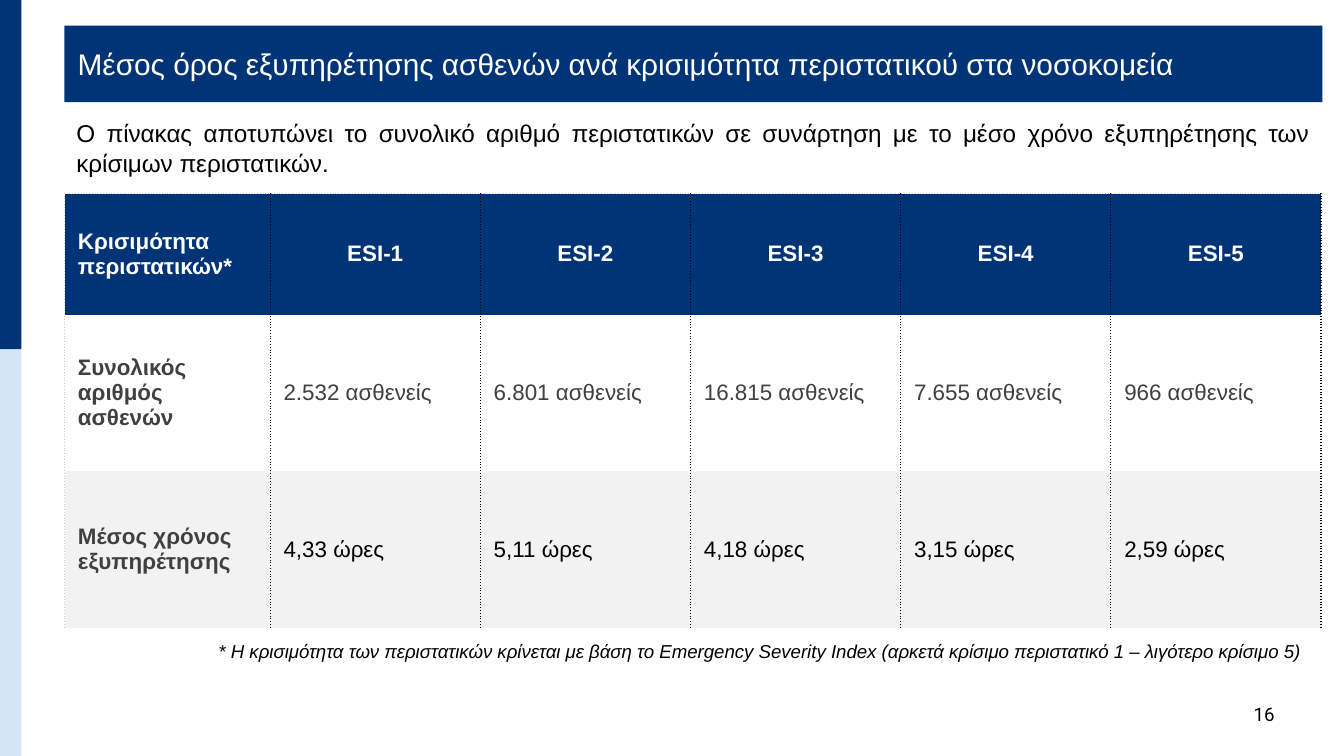
from dataclasses import dataclass

from lxml import etree
from pptx import Presentation
from pptx.dml.color import RGBColor
from pptx.enum.shapes import MSO_SHAPE
from pptx.enum.text import MSO_ANCHOR, PP_ALIGN
from pptx.oxml.ns import qn
from pptx.util import Inches, Pt

RECT = MSO_SHAPE.RECTANGLE
MIDDLE = MSO_ANCHOR.MIDDLE
LEFT, CENTER, RIGHT, JUSTIFY = (
    PP_ALIGN.LEFT, PP_ALIGN.CENTER, PP_ALIGN.RIGHT, PP_ALIGN.JUSTIFY)
NAVY, PALE, GREY, DARK = "013476", "D3E5F6", "F2F2F2", "404040"
BLACK, WHITE, SILVER = "000000", "FFFFFF", "CBCBCB"
WIDTH = 10
HEIGHT = WIDTH * 9 / 16


@dataclass
class Box:
    left: float
    top: float
    width: float
    height: float

    def place(self):
        return [Inches(v) for v in (self.left, self.top, self.width, self.height)]


@dataclass
class Style:
    size: float
    color: str = BLACK
    align: PP_ALIGN = LEFT
    font: str = "Arial"
    bold: bool = False
    italic: bool = False
    after: float = 0


@dataclass
class Row:
    height: float
    cells: list[str]
    head: Style
    body: Style
    fill: str | None = None


def rgb(color: str) -> RGBColor:
    return RGBColor.from_string(color)


def write(frame, text: str, style: Style) -> None:
    frame.text = text
    para = frame.paragraphs[0]
    para.alignment = style.align
    para.space_after = Pt(style.after)
    font = para.font
    font.name, font.size = style.font, Pt(style.size)
    font.bold, font.italic = style.bold, style.italic
    font.color.rgb = rgb(style.color)


def add_bar(slide, box: Box, color: str):
    bar = slide.shapes.add_shape(RECT, *box.place())
    bar.shadow.inherit = False
    bar.fill.solid()
    bar.fill.fore_color.rgb = rgb(color)
    bar.line.fill.background()
    return bar


def set_frame(frame, inset: float) -> None:
    frame.word_wrap = True
    frame.vertical_anchor = MIDDLE
    frame.margin_left = frame.margin_right = Inches(0.1)
    frame.margin_top = frame.margin_bottom = Inches(inset)


def add_text(slide, box: Box, text: str, style: Style, inset: float = 0.1) -> None:
    frame = slide.shapes.add_textbox(*box.place()).text_frame
    set_frame(frame, inset)
    write(frame, text, style)


def add_edge(cell, side: str, color: str | None = None, width: float = 0.75) -> None:
    """Give one side of a cell a dotted line, or none without a colour."""
    line = etree.SubElement(cell._tc.get_or_add_tcPr(), qn(f"a:ln{side}"))
    if color is None:
        etree.SubElement(line, qn("a:noFill"))
        return
    line.set("w", str(Pt(width)))
    fill = etree.SubElement(line, qn("a:solidFill"))
    etree.SubElement(fill, qn("a:srgbClr")).set("val", color)
    etree.SubElement(line, qn("a:prstDash")).set("val", "dot")


def fill_cell(cell, text: str, style: Style, fill: str | None,
              first: bool, top: bool) -> None:
    cell.vertical_anchor = MIDDLE
    cell.margin_left = cell.margin_right = Inches(0.1)
    write(cell.text_frame, text, style)
    add_edge(cell, "L", *((SILVER, 1) if first else (BLACK,)))
    add_edge(cell, "R", BLACK)
    add_edge(cell, "T", *((SILVER, 1) if top else ()))
    add_edge(cell, "B")
    if fill:
        cell.fill.solid()
        cell.fill.fore_color.rgb = rgb(fill)
    else:
        cell.fill.background()


def add_grid(slide, box: Box, rows: list[Row], first: float) -> None:
    """Draw a table whose columns after the first share the rest equally."""
    count = len(rows[0].cells)
    table = slide.shapes.add_table(len(rows), count, *box.place()).table
    table.first_row = table.horz_banding = False
    for c, col in enumerate(table.columns):
        col.width = Inches((box.width - first) / (count - 1) if c else first)
    for r, row in enumerate(rows):
        table.rows[r].height = Inches(row.height)
        for c, text in enumerate(row.cells):
            style = row.body if c else row.head
            fill_cell(table.cell(r, c), text, style, row.fill, c == 0, r == 0)


def main() -> None:
    deck = Presentation()
    deck.slide_width, deck.slide_height = Inches(WIDTH), Inches(HEIGHT)
    slide = deck.slides.add_slide(deck.slide_layouts[6])

    add_bar(slide, Box(0, 0, 0.16, 2.6), NAVY)
    add_bar(slide, Box(0, 2.6, 0.16, HEIGHT - 2.6), PALE)
    add_text(slide, Box(9.23, 5.17, 0.57, 0.28), "16", Style(10, font="Roboto"))

    title = add_bar(slide, Box(0.48, 0.19, 9.36, 0.57), NAVY).text_frame
    set_frame(title, 0.1)
    write(title, "Μέσος όρος εξυπηρέτησης ασθενών ανά κρισιμότητα "
          "περιστατικού στα νοσοκομεία", Style(16, WHITE))

    grid = Box(0.48, 1.44, 9.35, 3.23)
    top = 0.9
    tall = (grid.height - top) / 2
    label = Style(12, DARK, bold=True)
    counts = ["2.532", "6.801", "16.815", "7.655", "966"]
    hours = ["4,33", "5,11", "4,18", "3,15", "2,59"]
    rows = [
        Row(top, ["Κρισιμότητα περιστατικών*"] + [f"ESI-{n}" for n in range(1, 6)],
            Style(12, WHITE, bold=True), Style(12, WHITE, CENTER, bold=True), NAVY),
        Row(tall, ["Συνολικός αριθμός ασθενών"] + [f"{n} ασθενείς" for n in counts],
            label, Style(12, DARK)),
        Row(tall, ["Μέσος χρόνος εξυπηρέτησης"] + [f"{n} ώρες" for n in hours],
            label, Style(12), GREY),
    ]
    add_grid(slide, grid, rows, 1.53)

    add_text(slide, Box(1.11, 4.78, 8.66, 0.13),
             "* Η κρισιμότητα των περιστατικών κρίνεται με βάση το Emergency "
             "Severity Index (αρκετά κρίσιμο περιστατικό 1 – λιγότερο κρίσιμο 5)",
             Style(10, align=RIGHT, italic=True, after=6))
    add_text(slide, Box(0.47, 0.83, 9.36, 0.54),
             "Ο πίνακας αποτυπώνει το συνολικό αριθμό περιστατικών σε συνάρτηση "
             "με το μέσο χρόνο εξυπηρέτησης των κρίσιμων περιστατικών.",
             Style(13, align=JUSTIFY, after=6), 0.05)
    deck.save("out.pptx")


if __name__ == "__main__":
    main()
